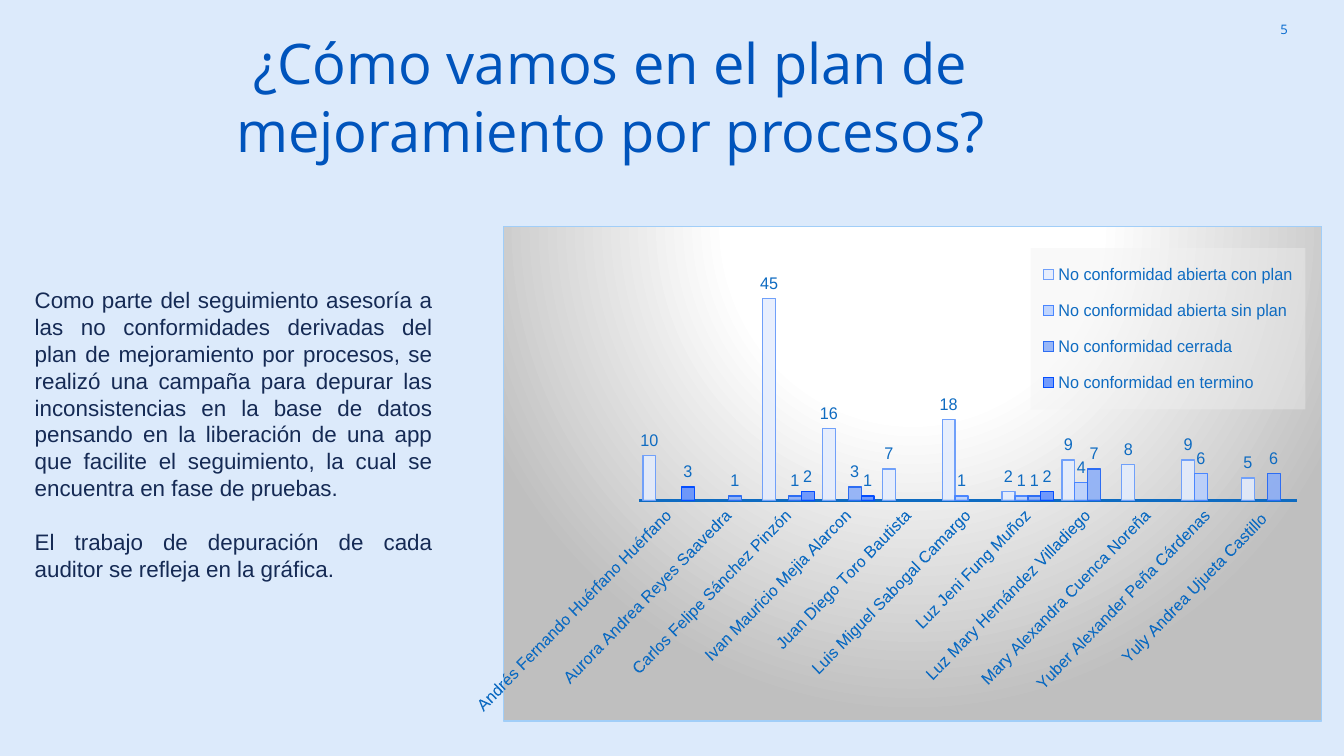
from lxml import etree
from pptx import Presentation
from pptx import util as u
from pptx.chart.data import CategoryChartData
from pptx.dml.color import RGBColor
from pptx.enum import chart as ch, text
from pptx.oxml import parse_xml
from pptx.oxml.ns import nsdecls, qn

COLORS = {
    "background": "DCEAFB", "title": "0054BC", "body": "152A54",
    "number": "0066CD", "label": "0E6BC1", "chart_text": "073763",
    "border": "A1CEF8", "white": "FFFFFF", "gray": "BFBFBF", "legend": "F2F2F2",
}
BODY = [
    "Como parte del seguimiento asesoría a las no conformidades derivadas del plan de "
    "mejoramiento por procesos, se realizó una campaña para depurar las inconsistencias en la "
    "base de datos pensando en la liberación de una app que facilite el seguimiento, la cual se "
    "encuentra en fase de pruebas.",
    "El trabajo de depuración de cada auditor se refleja en la gráfica.",
]
AUDITORS = [
    "Andrés Fernando Huérfano Huérfano", "Aurora Andrea Reyes Saavedra",
    "Carlos Felipe Sánchez Pinzón", "Ivan Mauricio Mejia Alarcon",
    "Juan Diego Toro Bautista", "Luis Miguel Sabogal Camargo", "Luz Jeni Fung Muñoz",
    "Luz Mary Hernández Villadiego", "Mary Alexandra Cuenca Noreña",
    "Yuber Alexander Peña Cárdenas", "Yuly Andrea Ujueta Castillo ",
]
# name, fill, outline, values by auditor
SERIES = [
    ("No conformidad abierta con plan", "E4EDFE", "70A0FA",
     [10, None, 45, 16, 7, 18, 2, 9, 8, 9, 5]),
    ("No conformidad abierta sin plan", "B7CFFF", "4A86FF",
     [None, None, None, None, None, 1, 1, 4, None, 6, None]),
    ("No conformidad cerrada", "88ACF8", "2D6DF3",
     [None, 1, 1, 3, None, None, 1, 7, None, None, 6]),
    ("No conformidad en termino", "5B8BFF", "044EFF",
     [3, None, 2, 1, None, None, 2, None, None, None, None]),
]


def rgb(value):
    return RGBColor.from_string(value)


def set_font(font, name, size, color):
    for key, value in {"name": name, "size": u.Pt(size), "bold": False}.items():
        setattr(font, key, value)
    font.color.rgb = rgb(color)


def set_line(line, color, width):
    line.color.rgb = rgb(color)
    line.width = u.Pt(width)


def place(sp, left, top, width, height):
    for key, value in zip(("left", "top", "width", "height"), (left, top, width, height)):
        setattr(sp, key, u.Inches(value))


def write(sp, paragraphs, font, frame, para):
    """Fill a shape with paragraphs that share one font and one format."""
    tf = sp.text_frame
    for key, value in {"word_wrap": True, **frame}.items():
        setattr(tf, key, value)
    for i, words in enumerate(paragraphs):
        p = tf.add_paragraph() if i else tf.paragraphs[0]
        for key, value in para.items():
            setattr(p, key, value)
        r = p.add_run()
        r.text = words
        set_font(r.font, *font)
    return tf


def add_text(s, box, *content):
    sp = s.shapes.add_textbox(*map(u.Inches, box))
    return write(sp, *content)


def manual_layout(x, y, w, h, inner=False):
    target = '<c:layoutTarget val="inner"/>' if inner else ""
    values = "".join(f'<c:{k} val="{v}"/>' for k, v in zip("xywh", (x, y, w, h)))
    return parse_xml(
        f'<c:layout {nsdecls("c")}><c:manualLayout>{target}<c:xMode val="edge"/>'
        f'<c:yMode val="edge"/>{values}</c:manualLayout></c:layout>')


def shape_format(inside):
    return parse_xml(f'<c:spPr {nsdecls("c", "a")}>{inside}</c:spPr>')


def set_alpha(fill_parent, percent):
    color = fill_parent.find(f'{qn("a:solidFill")}/{qn("a:srgbClr")}')
    etree.SubElement(color, qn("a:alpha"), val=str(percent * 1000))


def format_background(chart):
    stops = "".join(
        f'<a:gs pos="{pos * 1000}"><a:srgbClr val="{COLORS[c]}"/></a:gs>'
        for pos, c in ((0, "white"), (39, "white"), (100, "gray")))
    space = chart._chartSpace
    space.find(qn("c:chart")).addnext(shape_format(
        f'<a:gradFill><a:gsLst>{stops}</a:gsLst><a:path path="circle">'
        '<a:fillToRect l="50000" t="-80000" r="50000" b="180000"/></a:path></a:gradFill>'
        f'<a:ln w="9525"><a:solidFill><a:srgbClr val="{COLORS["border"]}"/>'
        '</a:solidFill></a:ln>'))
    area = space.find(f'{qn("c:chart")}/{qn("c:plotArea")}')
    for old in area.findall(qn("c:layout")):
        area.remove(old)
    area.insert(0, manual_layout(0.165, 0.101, 0.805, 0.453, inner=True))


def format_axes(chart):
    value, cat = chart.value_axis, chart.category_axis
    value.visible = value.has_major_gridlines = False
    value.minimum_scale, value.maximum_scale = 0, 50
    cat.major_tick_mark = cat.minor_tick_mark = ch.XL_TICK_MARK.NONE
    set_line(cat.format.line, COLORS["label"], 1.5)
    set_font(cat.tick_labels.font, "Arial", 9, COLORS["label"])
    cat._element.find(f'{qn("c:txPr")}/{qn("a:bodyPr")}').set("rot", "-2700000")


def format_legend(chart):
    chart.has_legend = True
    legend = chart.legend
    legend.position = ch.XL_LEGEND_POSITION.RIGHT
    legend.include_in_layout = False
    set_font(legend.font, "Arial", 9, COLORS["label"])
    el = legend._element
    for old in el.findall(qn("c:layout")):
        el.remove(old)
    el.find(qn("c:legendPos")).addnext(manual_layout(0.644, 0.044, 0.336, 0.326))
    el.find(qn("c:overlay")).addnext(shape_format(
        f'<a:solidFill><a:srgbClr val="{COLORS["legend"]}"><a:alpha val="39000"/>'
        '</a:srgbClr></a:solidFill>'))


def format_series(chart):
    plot = chart.plots[0]
    plot.gap_width, plot.overlap, plot.vary_by_categories = 65, 0, False
    for series, (_, fill, outline, _) in zip(plot.series, SERIES):
        series.format.fill.solid()
        series.format.fill.fore_color.rgb = rgb(fill)
        set_alpha(series._element.find(qn("c:spPr")), 85)
        set_line(series.format.line, outline, 0.75)
        labels = series.data_labels
        labels.show_value = True
        labels.position = ch.XL_LABEL_POSITION.OUTSIDE_END
        set_font(labels.font, "Arial", 9, COLORS["label"])


def add_auditor_chart(s, box):
    data = CategoryChartData()
    data.categories = AUDITORS
    for name, _, _, values in SERIES:
        data.add_series(name, values)
    chart = s.shapes.add_chart(
        ch.XL_CHART_TYPE.COLUMN_CLUSTERED, *map(u.Inches, box), data).chart
    chart.has_title = False
    set_font(chart.font, "Arial", 10, COLORS["chart_text"])
    format_background(chart)
    format_axes(chart)
    format_series(chart)
    format_legend(chart)


def main():
    prs = Presentation()
    prs.slide_width = u.Inches(10)
    prs.slide_height = prs.slide_width * 9 // 16
    s = prs.slides.add_slide(prs.slide_layouts[5])
    s.background.fill.solid()
    s.background.fill.fore_color.rgb = rgb(COLORS["background"])

    middle = {"vertical_anchor": text.MSO_ANCHOR.MIDDLE}
    place(s.shapes.title, 0.5, 0.16, 8.09, 1.11)
    write(s.shapes.title, ["¿Cómo vamos en el plan de mejoramiento por procesos?"],
          ("Open Sans", 30, COLORS["title"]),
          {**middle, "auto_size": text.MSO_AUTO_SIZE.NONE},
          {"alignment": text.PP_ALIGN.CENTER})
    add_text(s, (9.08, 0, 0.6, 0.43), ["5"], ("Open Sans", 7, COLORS["number"]),
             middle, {"alignment": text.PP_ALIGN.RIGHT})
    tf = add_text(s, (0.16, 2.08, 3.17, 2.32), BODY, ("Arial", 12, COLORS["body"]),
                  {"margin_right": u.Inches(0.11)},
                  {"alignment": text.PP_ALIGN.JUSTIFY})
    tf.paragraphs[1].space_before = u.Pt(14.5)
    add_auditor_chart(s, (3.52, 1.68, 6.32, 3.69))
    prs.save("out.pptx")


if __name__ == "__main__":
    main()
